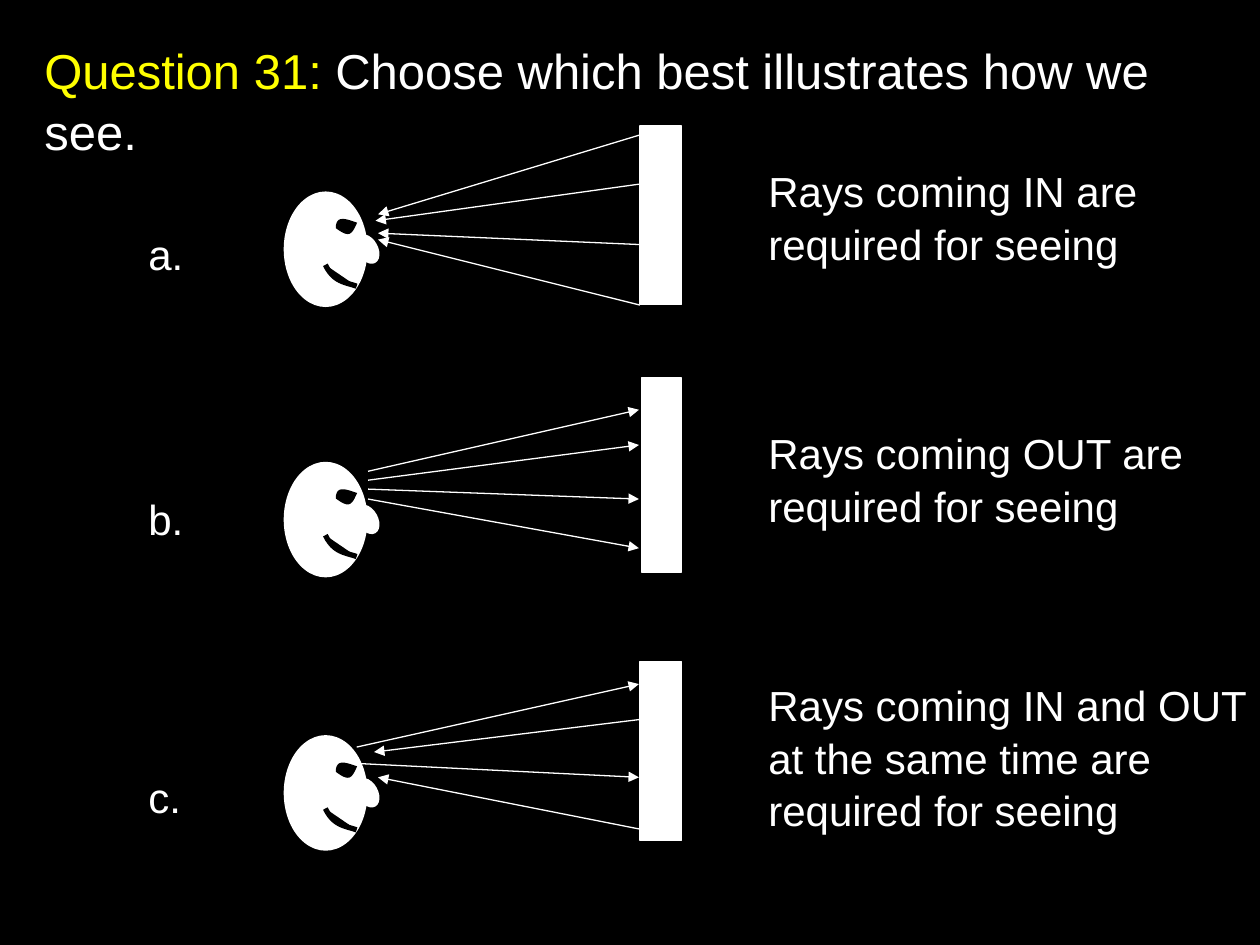
from typing import NamedTuple

from lxml import etree
from pptx import Presentation
from pptx.dml.color import RGBColor
from pptx.enum import shapes as kinds, text as txt
from pptx.oxml import ns
from pptx.util import Cm, Pt

HUES = {"back": "000000", "front": "FFFFFF", "mark": "FFFF00"}
FACE_X = 5.72
LEFT_X = 2.74
NOTE_X = 15.24


class Box(NamedTuple):
    x: float
    y: float
    w: float
    h: float


class Ray(NamedTuple):
    """Runs from its plain end to its arrowhead."""
    x1: float
    y1: float
    x2: float
    y2: float


class Choice(NamedTuple):
    mark: str
    mark_y: float
    face_y: float
    wall: Box
    note: str
    note_box: Box
    rays: list[Ray]


CHOICES = [
    Choice("a.", 4.45, 3.86, Box(12.9, 2.54, 0.84, 3.6),
           "Rays coming IN are required for seeing", Box(NOTE_X, 3.18, 8.46, 2.29),
           [Ray(12.9, 2.72, 7.62, 4.32), Ray(12.9, 3.71, 7.57, 4.45),
            Ray(12.9, 4.93, 7.62, 4.7), Ray(12.9, 6.15, 7.62, 4.83)]),
    Choice("b.", 9.78, 9.31, Box(12.93, 7.62, 0.81, 3.91),
           "Rays coming OUT are required for seeing", Box(NOTE_X, 8.46, 9.09, 2.29),
           [Ray(7.42, 9.5, 12.88, 8.26), Ray(7.42, 9.68, 12.88, 8.97),
            Ray(7.42, 9.86, 12.88, 10.06), Ray(7.42, 10.06, 12.88, 11.05)]),
    Choice("c.", 15.39, 14.82, Box(12.9, 13.34, 0.84, 3.6),
           "Rays coming IN and OUT at the same time are required for seeing",
           Box(NOTE_X, 13.54, 10.16, 3.3),
           [Ray(7.19, 15.06, 12.88, 13.79), Ray(12.93, 14.5, 7.54, 15.16),
            Ray(7.19, 15.39, 12.88, 15.67), Ray(12.88, 16.71, 7.62, 15.67)]),
]

# Face outlines as cubic curves, y measured from the top of the head
MOUTH = [[(7.19, 1.91), (6.96, 1.83), (6.73, 1.83), (6.56, 1.48)]]
EYE = [[(6.77, 0.74), (7.04, 0.94), (7.09, 0.88), (7.2, 0.63)],
       [(7.2, 0.63), (6.99, 0.56), (6.77, 0.46), (6.77, 0.74)]]


def hue(name: str) -> RGBColor:
    return RGBColor.from_string(HUES[name])


def paint(shape, fill: str, line: str | None = None, width: float = 0.75) -> None:
    shape.shadow.inherit = False
    shape.fill.solid()
    shape.fill.fore_color.rgb = hue(fill)
    if line:
        shape.line.color.rgb = hue(line)
        shape.line.width = Pt(width)
    else:
        shape.line.fill.background()


def add_form(slide, kind, box: Box, line: str | None = None):
    form = slide.shapes.add_shape(kind, *map(Cm, box))
    paint(form, "front", line)
    return form


def write(frame, runs: list[tuple[str, str]], size: int) -> None:
    frame.word_wrap = True
    frame.auto_size = txt.MSO_AUTO_SIZE.NONE
    frame.vertical_anchor = txt.MSO_ANCHOR.TOP
    para = frame.paragraphs[0]
    para.alignment = txt.PP_ALIGN.LEFT
    para.line_spacing = 1.04
    for words, tint in runs:
        run = para.add_run()
        run.text = words
        run.font.name = "Arial"
        run.font.size = Pt(size)
        run.font.color.rgb = hue(tint)


def add_text(slide, words: str, box: Box) -> None:
    frame = slide.shapes.add_textbox(*map(Cm, box)).text_frame
    write(frame, [(words, "front")], 24)


def add_ray(slide, ray: Ray) -> None:
    line = slide.shapes.add_connector(kinds.MSO_CONNECTOR.STRAIGHT, *map(Cm, ray))
    line.line.color.rgb = hue("front")
    line.line.width = Pt(0.75)
    etree.SubElement(line.line._get_or_add_ln(), ns.qn("a:tailEnd"), type="triangle")
    etree.SubElement(line._element.spPr, ns.qn("a:effectLst"))


def trace(curves: list, top: float, steps: int = 12) -> list[tuple[int, int]]:
    """Points along joined cubic curves."""
    spots = []
    for curve in curves:
        for step in range(steps + 1):
            t = step / steps
            parts = ((1 - t) ** 3, 3 * t * (1 - t) ** 2, 3 * t * t * (1 - t), t ** 3)
            x = sum(p * c[0] for p, c in zip(parts, curve))
            y = sum(p * c[1] for p, c in zip(parts, curve))
            spots.append((Cm(x), Cm(top + y)))
    return spots


def add_curve(slide, curves: list, top: float, close: bool):
    first, *rest = trace(curves, top)
    pen = slide.shapes.build_freeform(*first)
    pen.add_line_segments(rest, close=close)
    return pen.convert_to_shape()


def add_face(slide, top: float) -> None:
    oval = kinds.MSO_SHAPE.OVAL
    add_form(slide, oval, Box(FACE_X, top, 1.69, 2.33))
    nose = add_form(slide, oval, Box(7.2, top + 0.84, 0.42, 0.64))
    nose.rotation = 330.8
    paint(add_curve(slide, MOUTH, top, False), "back", "back", 3)
    paint(add_curve(slide, EYE, top, True), "back")


def add_choice(slide, pick: Choice) -> None:
    for ray in pick.rays:
        add_ray(slide, ray)
    add_form(slide, kinds.MSO_SHAPE.RECTANGLE, pick.wall, "front")
    add_face(slide, pick.face_y)
    add_text(slide, pick.mark, Box(LEFT_X, pick.mark_y, 1.27, 1.27))
    add_text(slide, pick.note, pick.note_box)


def main() -> None:
    deck = Presentation()
    deck.slide_width, deck.slide_height = Cm(25.4), Cm(19.05)
    slide = deck.slides.add_slide(deck.slide_layouts[5])
    slide.background.fill.solid()
    slide.background.fill.fore_color.rgb = hue("back")

    # Question
    title = slide.shapes.title
    title.left, title.top, title.width, title.height = map(Cm, (0.64, 0.64, 23.7, 2.62))
    write(title.text_frame,
          [("Question 31:", "mark"),
           (" Choose which best illustrates how we see.", "front")], 28)

    # Answers
    for pick in CHOICES:
        add_choice(slide, pick)

    deck.save("out.pptx")


if __name__ == "__main__":
    main()
